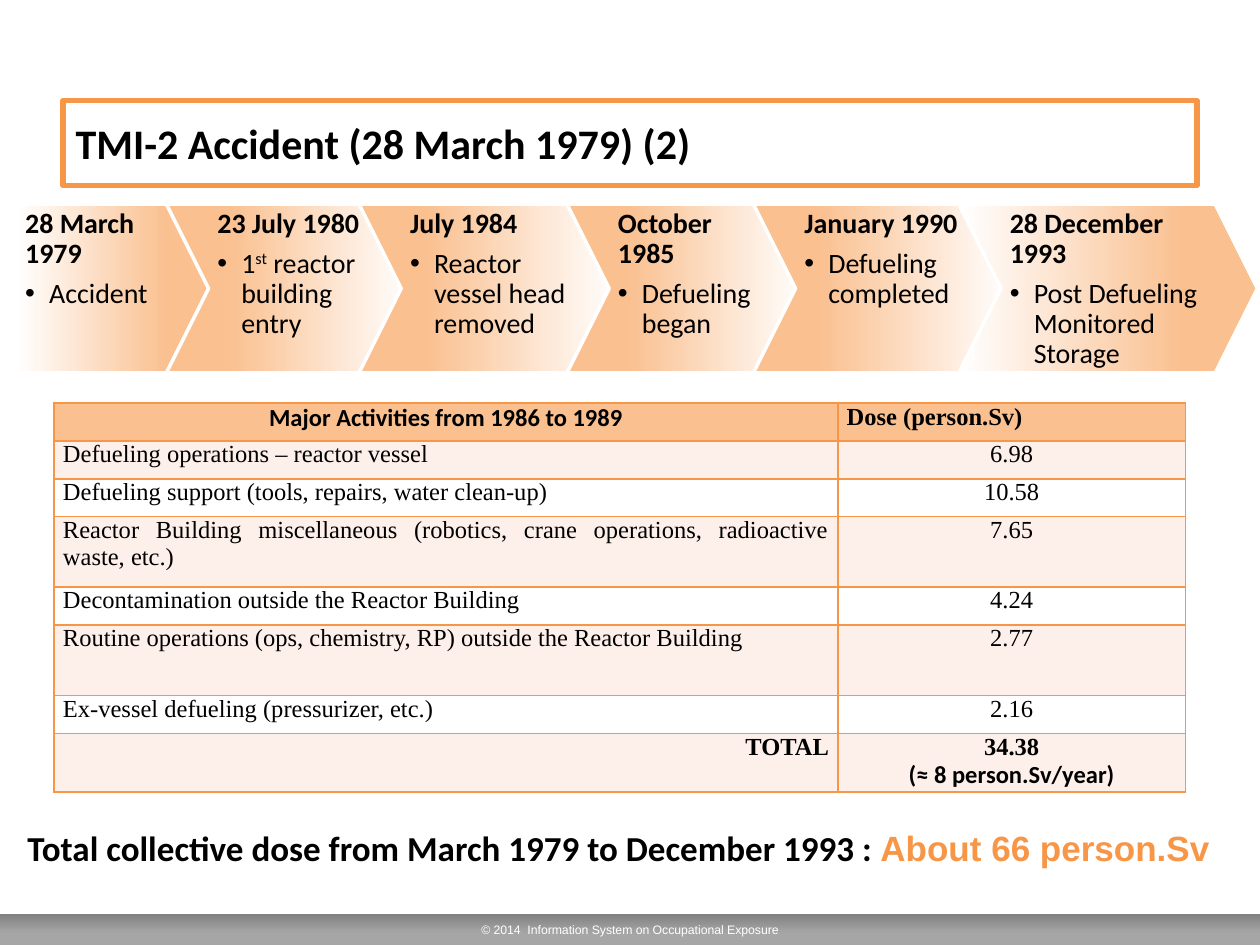
"""Build the TMI-2 accident slide: timeline, dose table and total dose."""
from lxml import etree
from pptx import Presentation
from pptx.dml.color import RGBColor
from pptx.enum.shapes import MSO_SHAPE
from pptx.enum.text import MSO_ANCHOR, MSO_AUTO_SIZE, PP_ALIGN
from pptx.oxml.ns import qn
from pptx.util import Inches, Pt

RECTANGLE, PENTAGON, CHEVRON = MSO_SHAPE.RECTANGLE, MSO_SHAPE.PENTAGON, MSO_SHAPE.CHEVRON
LEFT, CENTER, RIGHT, JUSTIFY = PP_ALIGN.LEFT, PP_ALIGN.CENTER, PP_ALIGN.RIGHT, PP_ALIGN.JUSTIFY
MIDDLE = MSO_ANCHOR.MIDDLE
NO_AUTOFIT = MSO_AUTO_SIZE.NONE

BLACK = RGBColor(0x00, 0x00, 0x00)
WHITE = RGBColor(0xFF, 0xFF, 0xFF)
ORANGE = RGBColor(0xF7, 0x96, 0x46)
PEACH = RGBColor(0xFA, 0xC0, 0x90)
PALE = RGBColor(0xFD, 0xEF, 0xE9)
DARK_GRAY = RGBColor(0x80, 0x80, 0x80)
LIGHT_GRAY = RGBColor(0xA6, 0xA6, 0xA6)

SANS, SERIF, ARIAL = "Calibri", "Times New Roman", "Arial"
SLIDE_W, SLIDE_H = 10, 7.5
STEP_TOP, STEP_HEIGHT, POINT = 1.62, 1.34, 0.25
NOTCH = STEP_HEIGHT * POINT
BULLET_INDENT = Inches(0.19)

STEPS = [
    (0.13, 1.6, "28 March 1979", ["Accident"]),
    (1.32, 1.95, "23 July 1980", ["1", "st", " reactor building entry"]),
    (2.85, 2.06, "July 1984", ["Reactor vessel head removed"]),
    (4.5, 1.9, "October 1985", ["Defueling began"]),
    (5.98, 2.04, "January 1990", ["Defueling completed"]),
    (7.61, 2.37, "28 December 1993", ["Post Defueling Monitored Storage"]),
]
DOSES = [
    ("Defueling operations – reactor vessel", "6.98", 0.3),
    ("Defueling support (tools, repairs, water clean-up)", "10.58", 0.3),
    ("Reactor Building miscellaneous (robotics, crane operations, "
     "radioactive waste, etc.)", "7.65", 0.56),
    ("Decontamination outside the Reactor Building", "4.24", 0.3),
    ("Routine operations (ops, chemistry, RP) outside the Reactor Building", "2.77", 0.56),
    ("Ex-vessel defueling (pressurizer, etc.)", "2.16", 0.3),
]


def style(font, name, size, color=BLACK, bold=False):
    """Set the face, size, colour and weight of a font."""
    font.name, font.size, font.bold = name, Pt(size), bold
    font.color.rgb = color


def set_margins(holder, left, top, right, bottom):
    """Set the inner margins of a text frame or cell in inches."""
    holder.margin_left, holder.margin_top = Inches(left), Inches(top)
    holder.margin_right, holder.margin_bottom = Inches(right), Inches(bottom)


def add_gradient_shape(slide, kind, box, stops, angle):
    """Add a preset shape with a two-stop linear gradient."""
    shape = slide.shapes.add_shape(kind, *map(Inches, box))
    shape.shadow.inherit = False
    shape.fill.gradient()
    shape.fill.gradient_angle = angle
    for stop, (position, color) in zip(shape.fill.gradient_stops, stops):
        stop.position, stop.color.rgb = position, color
    return shape


def add_text_frame(slide, box):
    """Add a wrapping text box and return its frame."""
    frame = slide.shapes.add_textbox(*map(Inches, box)).text_frame
    frame.word_wrap = True
    return frame


def add_bullet(paragraph):
    """Give a paragraph a round bullet with a hanging indent."""
    properties = paragraph._p.get_or_add_pPr()
    properties.set("marL", str(BULLET_INDENT))
    properties.set("indent", str(-BULLET_INDENT))
    etree.SubElement(properties, qn("a:buFont"), typeface=ARIAL)
    etree.SubElement(properties, qn("a:buChar"), char="•")


def add_title(slide):
    """Place the framed slide title."""
    title = slide.shapes.title
    title.left, title.top = Inches(0.5), Inches(0.8)
    title.width, title.height = Inches(SLIDE_W - 1), Inches(0.67)
    title.line.color.rgb = ORANGE
    title.line.width = Pt(3)
    frame = title.text_frame
    frame.text = "TMI-2 Accident (28 March 1979) (2)"
    frame.auto_size, frame.vertical_anchor = NO_AUTOFIT, MIDDLE
    frame.paragraphs[0].alignment = LEFT
    style(frame.paragraphs[0].font, SANS, 24, bold=True)


def add_footer(slide):
    """Draw the copyright band along the bottom edge."""
    band = add_gradient_shape(slide, RECTANGLE, (0, SLIDE_H - 0.25, SLIDE_W, 0.25),
                              [(0, DARK_GRAY), (0.64, LIGHT_GRAY)], 270)
    band.line.fill.background()
    band.text_frame.vertical_anchor = MIDDLE
    notice = band.text_frame.paragraphs[0]
    notice.text = "© 2014  Information System on Occupational Exposure"
    notice.alignment = CENTER
    style(notice.font, ARIAL, 7, WHITE)


def add_step(slide, left, width, date, event, is_first, is_last):
    """Draw one timeline arrow with its date and event."""
    arrow = add_gradient_shape(slide, PENTAGON if is_first else CHEVRON,
                               (left, STEP_TOP, width, STEP_HEIGHT),
                               [(0.25, PEACH), (1, WHITE)],
                               180 if is_first or is_last else 0)
    arrow.adjustments[0] = POINT
    arrow.line.color.rgb = WHITE
    arrow.line.width = Pt(2)

    text_left = left if is_first else left + NOTCH
    text_width = width - (NOTCH / 2 if is_first else 2 * NOTCH)
    frame = add_text_frame(slide, (text_left, STEP_TOP, text_width, STEP_HEIGHT))
    set_margins(frame, 0.07, 0.04, 0.29 if is_first else 0.07, 0.04)
    heading, detail = frame.paragraphs[0], frame.add_paragraph()
    heading.text = date
    heading.space_after = Pt(5.6)
    add_bullet(detail)
    for part in event:
        run = detail.add_run()
        run.text = part
        if part == "st":
            run._r.get_or_add_rPr().set("baseline", "30000")
    for paragraph in (heading, detail):
        paragraph.line_spacing = 0.9
        style(paragraph.font, SANS, 16, bold=paragraph is heading)


def add_borders(cell):
    """Outline a cell on all four sides."""
    properties = cell._tc.get_or_add_tcPr()
    for side in ("a:lnL", "a:lnR", "a:lnT", "a:lnB"):
        line = etree.SubElement(properties, qn(side), w=str(Pt(1)))
        fill = etree.SubElement(line, qn("a:solidFill"))
        etree.SubElement(fill, qn("a:srgbClr"), val=str(ORANGE))


def fill_cell(cell, lines, alignment, color, bold=False):
    """Format a cell and write its (text, font name) lines."""
    set_margins(cell, 0.07, 0, 0.07, 0)
    add_borders(cell)
    cell.fill.solid()
    cell.fill.fore_color.rgb = color
    cell.text = "\n".join(text for text, _ in lines)
    for paragraph, (_, name) in zip(cell.text_frame.paragraphs, lines):
        paragraph.alignment = alignment
        paragraph.space_after = Pt(2 if len(lines) == 1 else 0)
        style(paragraph.font, name, 14, bold=bold)


def add_dose_table(slide):
    """Build the table of doses by activity."""
    heights = [0.3, *(height for _, _, height in DOSES), 0.37]
    table = slide.shapes.add_table(len(heights), 2, Inches(0.43), Inches(3.2),
                                   Inches(8.98), Inches(sum(heights))).table
    table.columns[0].width, table.columns[1].width = Inches(6.22), Inches(2.76)
    for row, height in zip(table.rows, heights):
        row.height = Inches(height)
    fill_cell(table.cell(0, 0), [("Major Activities from 1986 to 1989", SANS)],
              CENTER, PEACH, True)
    fill_cell(table.cell(0, 1), [("Dose (person.Sv)", SERIF)], JUSTIFY, PEACH, True)
    for row, (activity, dose, _) in enumerate(DOSES, start=1):
        color = PALE if row % 2 else WHITE
        fill_cell(table.cell(row, 0), [(activity, SERIF)], JUSTIFY, color)
        fill_cell(table.cell(row, 1), [(dose, SERIF)], CENTER, color)
    total = len(heights) - 1
    fill_cell(table.cell(total, 0), [("TOTAL", SERIF)], RIGHT, PALE, True)
    fill_cell(table.cell(total, 1), [("34.38", SERIF), ("(≈ 8 person.Sv/year)", SANS)],
              CENTER, PALE, True)


def add_conclusion(slide):
    """Write the total collective dose below the table."""
    sentence = add_text_frame(slide, (0.12, 6.51, 9.8, 0.55)).paragraphs[0]
    for text, name, color in (
            ("Total collective dose from March 1979 to December 1993 : ", SANS, BLACK),
            ("About 66 person.Sv", ARIAL, ORANGE)):
        run = sentence.add_run()
        run.text = text
        style(run.font, name, 20, color, True)


def main():
    """Assemble and save the slide."""
    deck = Presentation()
    deck.slide_width, deck.slide_height = Inches(SLIDE_W), Inches(SLIDE_H)
    slide = deck.slides.add_slide(deck.slide_layouts[5])
    add_footer(slide)
    add_title(slide)
    add_conclusion(slide)
    add_dose_table(slide)
    for index, step in enumerate(STEPS):
        add_step(slide, *step, index == 0, index == len(STEPS) - 1)
    deck.save("out.pptx")


if __name__ == "__main__":
    main()
